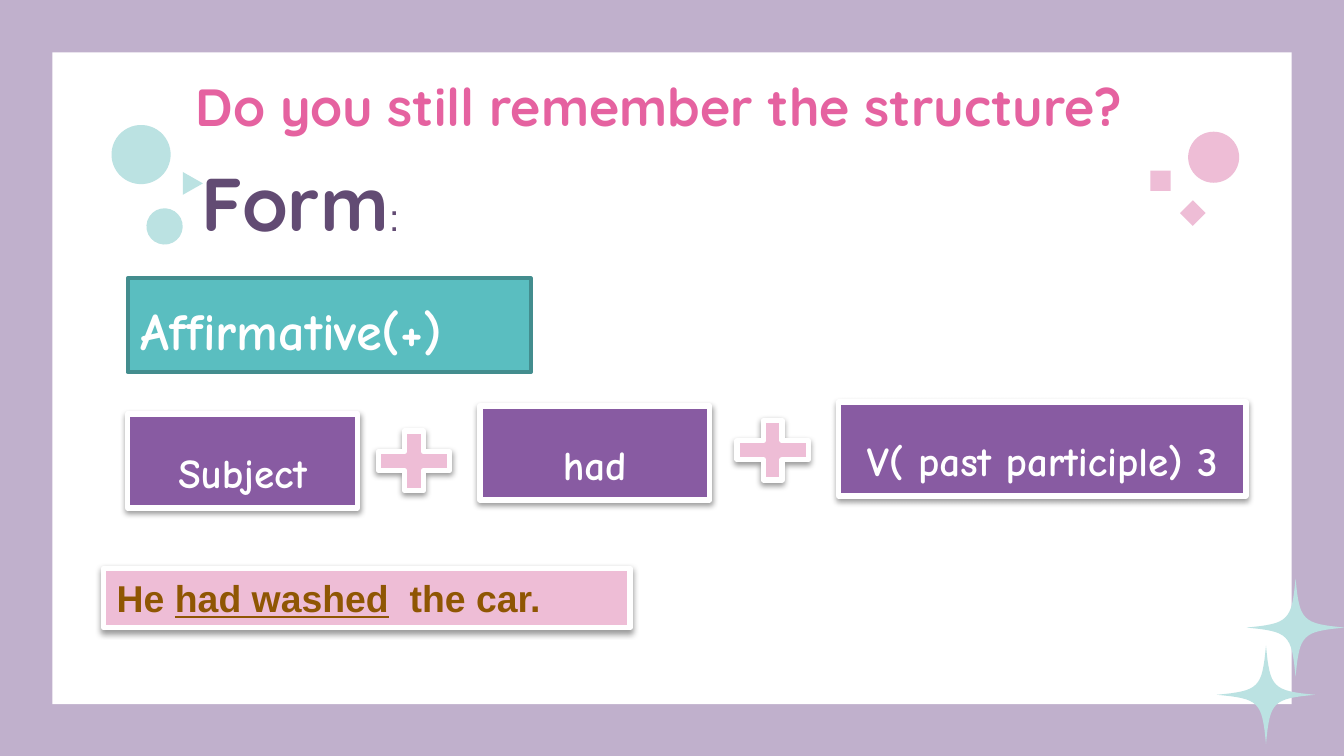
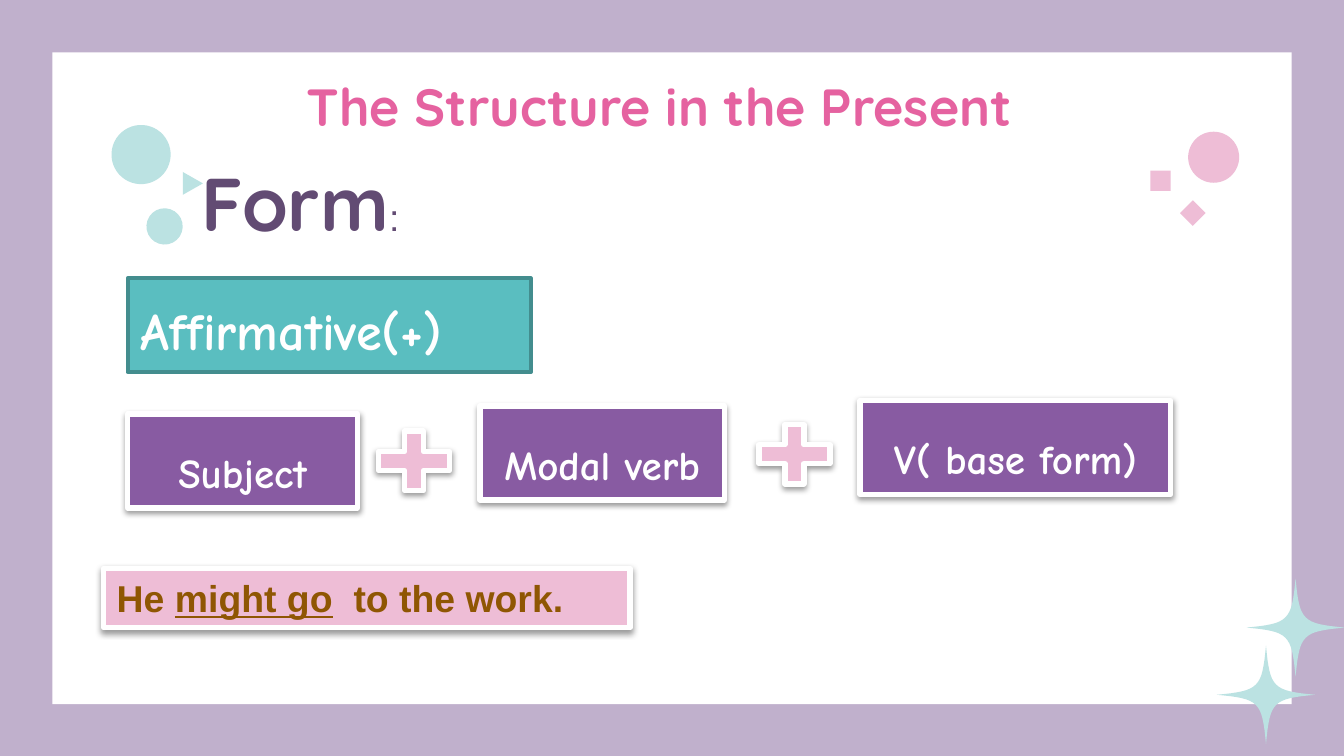
from dataclasses import dataclass
from typing import Optional

from lxml.etree import SubElement
from pptx import Presentation
from pptx.dml.color import RGBColor
from pptx.enum.shapes import MSO_SHAPE
from pptx.enum.text import MSO_ANCHOR, MSO_AUTO_SIZE, PP_ALIGN
from pptx.oxml.ns import qn
from pptx.util import Pt

EMU_PER_PX = 9144

COLORS = {
    "lavender": "C0B0CC",
    "white": "FFFFFF",
    "heading": "E562A0",
    "pink": "EEBDD6",
    "mint": "BBE2E2",
    "teal": "5ABEC0",
    "teal_edge": "438D8E",
    "purple": "885BA2",
    "plum": "624B73",
    "brown": "8F5603",
    "shadow": "000000",
}
HEADING_FONT, HAND_FONT, BODY_FONT = "Quicksand", "Comic Neue", "Arial"


@dataclass(frozen=True)
class Box:
    left: int
    top: int
    width: int
    height: int


@dataclass(frozen=True)
class Ornament:
    kind: MSO_SHAPE
    box: Box
    rotation: float = 0


@dataclass(frozen=True)
class Term:
    text: str
    box: Box


@dataclass(frozen=True)
class Lesson:
    heading: str
    terms: tuple[Term, ...]
    pluses: tuple[tuple[int, int], ...]
    example: tuple[str, str, str]


FRAME = Box(39, 39, 922, 485)
HEADING = Box(75, 45, 831, 63)
FORM = Box(140, 112, 500, 77)
AFFIRMATIVE = Box(95, 207, 300, 70)
EXAMPLE = Box(77, 423, 392, 44)
SUBJECT = Term("Subject", Box(95, 308, 171, 70))
FIRST_PLUS = (272, 313)
PLUS_WIDTH, PLUS_HEIGHT = 72, 60

ORNAMENTS = {
    "pink": (
        Ornament(MSO_SHAPE.DIAMOND, Box(878, 149, 19, 19)),
        Ornament(MSO_SHAPE.RECTANGLE, Box(856, 127, 15, 15)),
        Ornament(MSO_SHAPE.OVAL, Box(884, 98, 38, 38)),
    ),
    "mint": (
        Ornament(MSO_SHAPE.OVAL, Box(83, 93, 44, 44), 333.4),
        Ornament(MSO_SHAPE.OVAL, Box(109, 155, 27, 27), 333.4),
        Ornament(MSO_SHAPE.ISOSCELES_TRIANGLE, Box(135, 129, 17, 15), 90),
    ),
}

SPARKLE_CENTERS = ((964, 467), (942, 517))
SPARKLE_RADIUS = 36.5
SPARKLE_CURVE = ((0, -SPARKLE_RADIUS), (-3, -5), (-5, -3), (-SPARKLE_RADIUS, 0))
CURVE_STEPS = 16

LESSONS = (
    Lesson(
        "Do you still remember the structure?",
        (
            SUBJECT,
            Term("had", Box(357, 302, 171, 70)),
            Term("V( past participle) 3", Box(624, 299, 303, 70)),
        ),
        (FIRST_PLUS, (539, 305)),
        ("He ", "had washed", "  the car."),
    ),
    Lesson(
        "The Structure in the Present",
        (
            SUBJECT,
            Term("Modal verb", Box(357, 302, 182, 70)),
            Term("V( base form)", Box(640, 298, 231, 70)),
        ),
        (FIRST_PLUS, (555, 308)),
        ("He ", "might go", "  to the work."),
    ),
)


def px(length: float) -> int:
    return round(length * EMU_PER_PX)


def bounds(box: Box) -> tuple[int, int, int, int]:
    return px(box.left), px(box.top), px(box.width), px(box.height)


def color(name: str) -> RGBColor:
    return RGBColor.from_string(COLORS[name])


def write(paragraph, text: str, *, font: str, size: int, fill: str,
          bold: bool = True, underline: bool = False, align=PP_ALIGN.LEFT) -> None:
    paragraph.alignment = align
    run = paragraph.add_run()
    run.text = text
    run.font.name = font
    run.font.size = Pt(size)
    run.font.bold = bold
    run.font.underline = underline
    run.font.color.rgb = color(fill)


def set_frame(frame, *, anchor, top: int = 10, bottom: int = 10):
    frame.word_wrap = True
    frame.auto_size = MSO_AUTO_SIZE.NONE
    frame.vertical_anchor = anchor
    frame.margin_left = frame.margin_right = px(10)
    frame.margin_top, frame.margin_bottom = px(top), px(bottom)
    return frame.paragraphs[0]


def paint(shape, fill: str, line: Optional[str] = None, line_width: int = 3) -> None:
    shape.fill.solid()
    shape.fill.fore_color.rgb = color(fill)
    if line:
        shape.line.color.rgb = color(line)
        shape.line.width = Pt(line_width)
    else:
        shape.line.fill.background()
    shape.shadow.inherit = False


def add_block(shapes, box: Box, fill: str, kind=MSO_SHAPE.RECTANGLE,
              line: Optional[str] = None, line_width: int = 3):
    block = shapes.add_shape(kind, *bounds(box))
    paint(block, fill, line, line_width)
    return block


def add_sticker(shapes, box: Box, fill: str, kind=MSO_SHAPE.RECTANGLE):
    sticker = add_block(shapes, box, fill, kind, "white")
    effects = sticker._element.spPr.find(qn("a:effectLst"))
    shadow = SubElement(effects, qn("a:outerShdw"), blurRad=str(Pt(3.1)),
                        dist=str(Pt(1.6)), dir="5400000", rotWithShape="0")
    tint = SubElement(shadow, qn("a:srgbClr"), val=COLORS["shadow"])
    SubElement(tint, qn("a:alpha"), val="38000")
    return sticker


def curve_point(step: int) -> tuple[float, float]:
    t = step / CURVE_STEPS
    weights = ((1 - t) ** 3, 3 * t * (1 - t) ** 2, 3 * t * t * (1 - t), t ** 3)
    x, y = (sum(w * p[axis] for w, p in zip(weights, SPARKLE_CURVE)) for axis in (0, 1))
    return x, y


def add_sparkle(shapes, center: tuple[int, int]) -> None:
    outline = []
    quarter = [curve_point(step) for step in range(CURVE_STEPS)]
    for _ in range(4):
        outline += [(px(center[0] + x), px(center[1] + y)) for x, y in quarter]
        quarter = [(y, -x) for x, y in quarter]
    builder = shapes.build_freeform(*outline[0])
    builder.add_line_segments(outline[1:], close=True)
    paint(builder.convert_to_shape(), "mint")


def add_ornaments(shapes) -> None:
    for fill, ornaments in ORNAMENTS.items():
        cluster = shapes.add_group_shape()
        for ornament in ornaments:
            piece = add_block(cluster.shapes, ornament.box, fill, ornament.kind)
            piece.rotation = ornament.rotation
    for center in SPARKLE_CENTERS:
        add_sparkle(shapes, center)


def add_heading(slide, text: str) -> None:
    heading = slide.shapes.title
    heading.left, heading.top, heading.width, heading.height = bounds(HEADING)
    line = set_frame(heading.text_frame, anchor=MSO_ANCHOR.TOP)
    write(line, text, font=HEADING_FONT, size=28, fill="heading", align=PP_ALIGN.CENTER)


def add_form_label(shapes) -> None:
    label = shapes.add_textbox(*bounds(FORM))
    line = set_frame(label.text_frame, anchor=MSO_ANCHOR.TOP, top=5, bottom=5)
    write(line, "Form", font=HEADING_FONT, size=40, fill="plum")
    write(line, ":", font=BODY_FONT, size=20, fill="plum", bold=False)


def add_affirmative(shapes) -> None:
    banner = add_block(shapes, AFFIRMATIVE, "teal", line="teal_edge", line_width=2)
    line = set_frame(banner.text_frame, anchor=MSO_ANCHOR.MIDDLE, top=6, bottom=0)
    write(line, "Affirmative(+)", font=HAND_FONT, size=28, fill="white")


def add_term(shapes, term: Term) -> None:
    card = add_sticker(shapes, term.box, "purple")
    line = set_frame(card.text_frame, anchor=MSO_ANCHOR.MIDDLE, top=16, bottom=0)
    write(line, term.text, font=HAND_FONT, size=22, fill="white", align=PP_ALIGN.CENTER)


def add_example(shapes, parts: tuple[str, str, str]) -> None:
    sentence = add_sticker(shapes, EXAMPLE, "pink")
    line = set_frame(sentence.text_frame, anchor=MSO_ANCHOR.MIDDLE, top=5, bottom=5)
    for position, part in enumerate(parts):
        write(line, part, font=BODY_FONT, size=20, fill="brown", underline=position == 1)


def add_lesson(deck, layout, lesson: Lesson) -> None:
    slide = deck.slides.add_slide(layout)
    shapes = slide.shapes
    panel = add_block(shapes, FRAME, "white")
    shapes._spTree.insert(2, panel._element)
    add_heading(slide, lesson.heading)
    add_ornaments(shapes)
    add_affirmative(shapes)
    for term in lesson.terms:
        add_term(shapes, term)
    for left, top in lesson.pluses:
        add_sticker(shapes, Box(left, top, PLUS_WIDTH, PLUS_HEIGHT), "pink", MSO_SHAPE.MATH_PLUS)
    add_example(shapes, lesson.example)
    add_form_label(shapes)


def main() -> None:
    deck = Presentation()
    deck.slide_width, deck.slide_height = px(1000), px(562.5)
    backdrop = deck.slide_master.background.fill
    backdrop.solid()
    backdrop.fore_color.rgb = color("lavender")
    title_only = deck.slide_layouts.get_by_name("Title Only")
    for lesson in LESSONS:
        add_lesson(deck, title_only, lesson)
    deck.save("out.pptx")


if __name__ == "__main__":
    main()
